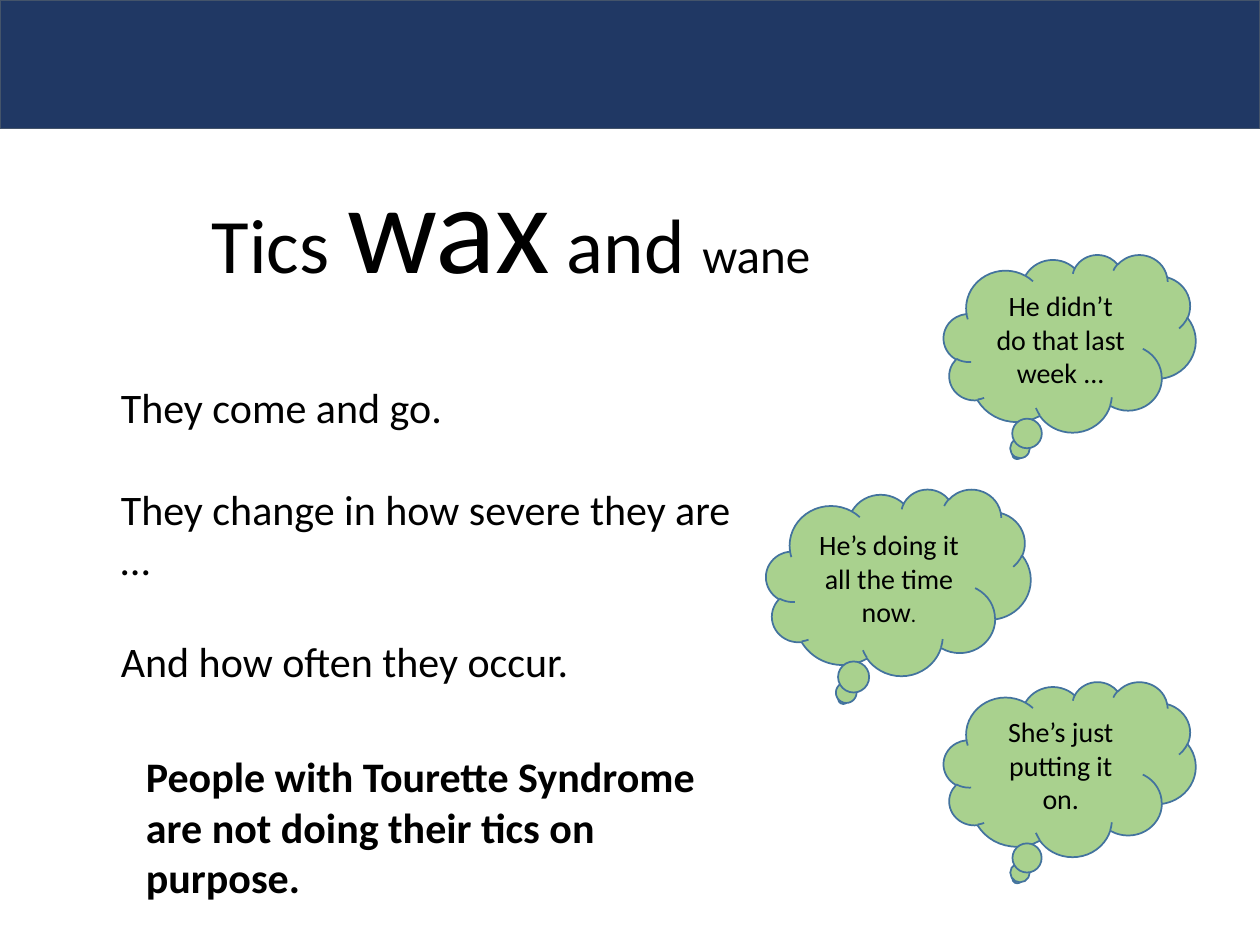
from pptx import Presentation
from pptx.dml.color import RGBColor
from pptx.enum.shapes import MSO_SHAPE as Preset
from pptx.enum.text import MSO_ANCHOR as Anchor, PP_ALIGN as Align
from pptx.util import Pt

NAVY = RGBColor(0x20, 0x38, 0x64)
SLATE = RGBColor(0x44, 0x54, 0x6A)
GREEN = RGBColor(0xA9, 0xD1, 0x8E)
BLUE = RGBColor(0x43, 0x73, 0x9E)
BLACK = RGBColor(0, 0, 0)


def add_filled_shape(preset, box, fill, line):
    shape = slide.shapes.add_shape(preset, *map(Pt, box))
    shape.shadow.inherit = False
    shape.fill.solid()
    shape.fill.fore_color.rgb = fill
    shape.line.color.rgb = line
    shape.line.width = Pt(1)
    return shape


def write_paragraphs(shape, paragraphs, size, align=Align.LEFT, gap=0, bold=False):
    """Each paragraph is a list of (text, size) runs; a size of None keeps the paragraph's."""
    frame = shape.text_frame
    frame.word_wrap = True
    for index, runs in enumerate(paragraphs):
        paragraph = frame.add_paragraph() if index else frame.paragraphs[0]
        paragraph.alignment = align
        if index:
            paragraph.space_before = Pt(gap)
        paragraph.font.name = "Calibri"
        paragraph.font.size = Pt(size)
        paragraph.font.bold = bold
        paragraph.font.color.rgb = BLACK
        for text, run_size in runs:
            run = paragraph.add_run()
            run.text = text
            if run_size:
                run.font.size = Pt(run_size)


presentation = Presentation()
presentation.slide_width = Pt(720)
presentation.slide_height = Pt(540)
slide = presentation.slides.add_slide(presentation.slide_layouts[6])

add_filled_shape(Preset.RECTANGLE, (0, 0, 720, 73.5), NAVY, SLATE)

title = slide.shapes.add_textbox(Pt(62), Pt(80.6), Pt(460), Pt(94.3))
title_runs = [("Tics ", None), ("wax", 72), (" and ", None), ("wane", 28)]
write_paragraphs(title, [title_runs], 44, Align.CENTER)

body = slide.shapes.add_textbox(Pt(62), Pt(214.6), Pt(383.8), Pt(200))
statements = [
    "They come and go.",
    "They change in how severe they are …",
    "And how often they occur.",
]
write_paragraphs(body, [[(text, None)] for text in statements], 24, gap=29.3)

thoughts = [
    ((539.3, 145.4, 144, 101.5), [("He didn’t do that last week ...", None)]),
    ((437.8, 279.4, 151.2, 106.6), [("He’s doing it all the time now", None), (".", 12)]),
    ((539.3, 389.5, 144, 100), [("She’s just putting it on.", None)]),
]
for box, runs in thoughts:
    cloud = add_filled_shape(Preset.CLOUD_CALLOUT, box, GREEN, BLUE)
    cloud.text_frame.vertical_anchor = Anchor.MIDDLE
    write_paragraphs(cloud, [runs], 16, Align.CENTER)

conclusion = slide.shapes.add_textbox(Pt(76.3), Pt(425.5), Pt(361.4), Pt(94.3))
conclusion_text = "People with Tourette Syndrome are not doing their tics on purpose."
write_paragraphs(conclusion, [[(conclusion_text, None)]], 24, bold=True)

presentation.save("out.pptx")
